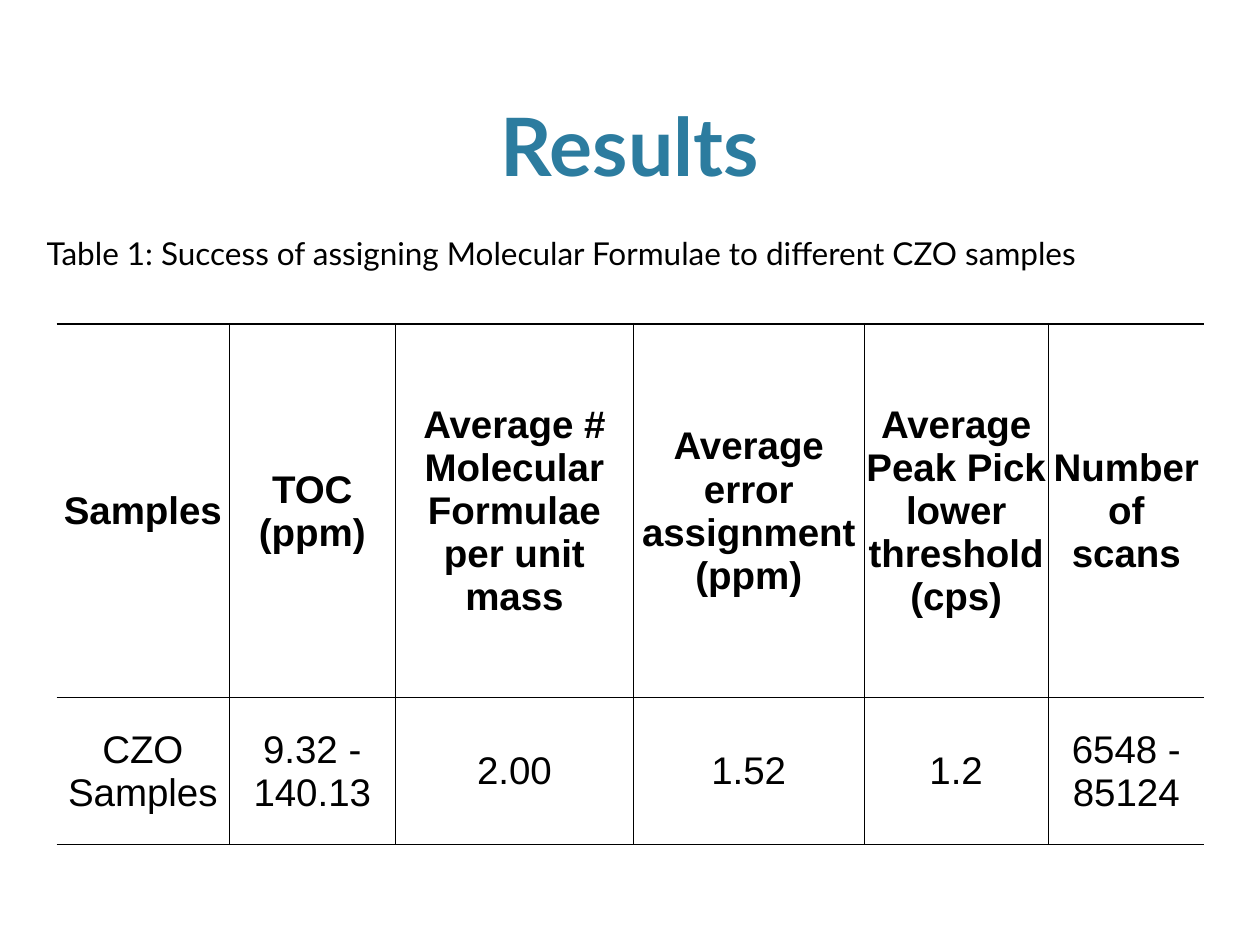
from lxml import etree
from pptx import Presentation
from pptx import util as u
from pptx.dml.color import RGBColor
from pptx.enum import text
from pptx.oxml import ns

BLACK = "000000"
BLUE = "2C7C9F"
HEADINGS = ["Samples", "TOC (ppm)", "Average # Molecular Formulae per unit mass",
            "Average error assignment (ppm)",
            "Average Peak Pick lower threshold (cps)", "Number of scans"]
VALUES = ["CZO Samples", "9.32 - 140.13", "2.00", "1.52", "1.2", "6548 - 85124"]
COLUMN_WIDTHS = [3.48, 3.35, 4.8, 4.65, 3.71, 3.15]
ROW_HEIGHTS = [7.52, 2.97]


def colour(value):
    return RGBColor.from_string(value)


def write_text(frame, content, size, font="Lato", color=BLACK, bold=False,
               align=text.PP_ALIGN.LEFT):
    paragraph = frame.paragraphs[0]
    paragraph.alignment = align
    run = paragraph.add_run()
    run.text = content
    run.font.size = u.Pt(size)
    run.font.name = font
    run.font.bold = bold
    run.font.color.rgb = colour(color)


def add_text_box(slide, box, content, anchor=text.MSO_ANCHOR.TOP, **text_format):
    shape = slide.shapes.add_textbox(*map(u.Cm, box))
    frame = shape.text_frame
    frame.word_wrap = True
    frame.vertical_anchor = anchor
    write_text(frame, content, **text_format)


def set_border(cell, side, width):
    """Draw one side (L, R, T or B) in points; a width of 0 hides it."""
    properties = cell._tc.get_or_add_tcPr()
    line = etree.SubElement(properties, ns.qn(f"a:ln{side}"), w=str(u.Pt(width)))
    if not width:
        etree.SubElement(line, ns.qn("a:noFill"))
        return
    fill = etree.SubElement(line, ns.qn("a:solidFill"))
    etree.SubElement(fill, ns.qn("a:srgbClr"), val=BLACK)


def format_cell(cell, content, is_header, is_first, is_last):
    cell.vertical_anchor = text.MSO_ANCHOR.MIDDLE
    cell.margin_left = cell.margin_right = cell.margin_top = u.Cm(0.03)
    cell.margin_bottom = 0
    write_text(cell.text_frame, content, size=22, font="Arial", bold=is_header,
               align=text.PP_ALIGN.CENTER)
    set_border(cell, "L", 0 if is_first else 0.5)
    set_border(cell, "R", 0 if is_last else 0.5)
    set_border(cell, "T", 1.5 if is_header else 0.5)
    set_border(cell, "B", 0.5)
    cell.fill.background()


def add_results_table(slide, left, top):
    rows = [HEADINGS, VALUES]
    table = slide.shapes.add_table(
        len(rows), len(HEADINGS), u.Cm(left), u.Cm(top),
        u.Cm(sum(COLUMN_WIDTHS)), u.Cm(sum(ROW_HEIGHTS))).table
    table.first_row = table.horz_banding = False
    for column, width in zip(table.columns, COLUMN_WIDTHS):
        column.width = u.Cm(width)
    for row_index, (contents, height) in enumerate(zip(rows, ROW_HEIGHTS)):
        table.rows[row_index].height = u.Cm(height)
        for column_index, content in enumerate(contents):
            format_cell(table.cell(row_index, column_index), content,
                        is_header=row_index == 0, is_first=column_index == 0,
                        is_last=column_index == len(contents) - 1)


def main():
    presentation = Presentation()
    presentation.slide_width = u.Cm(25.4)
    presentation.slide_height = u.Cm(19.05)
    slide = presentation.slides.add_slide(presentation.slide_layouts[6])
    add_text_box(slide, (1.52, 0.3, 22.35, 3.71), "Results",
                 anchor=text.MSO_ANCHOR.BOTTOM, size=46, color=BLUE, bold=True,
                 align=text.PP_ALIGN.CENTER)
    add_results_table(slide, left=1.14, top=6.53)
    add_text_box(slide, (0.69, 4.6, 24.16, 1.02),
                 "Table 1: Success of assigning Molecular Formulae to different CZO samples",
                 size=18)
    presentation.save("out.pptx")


if __name__ == "__main__":
    main()
